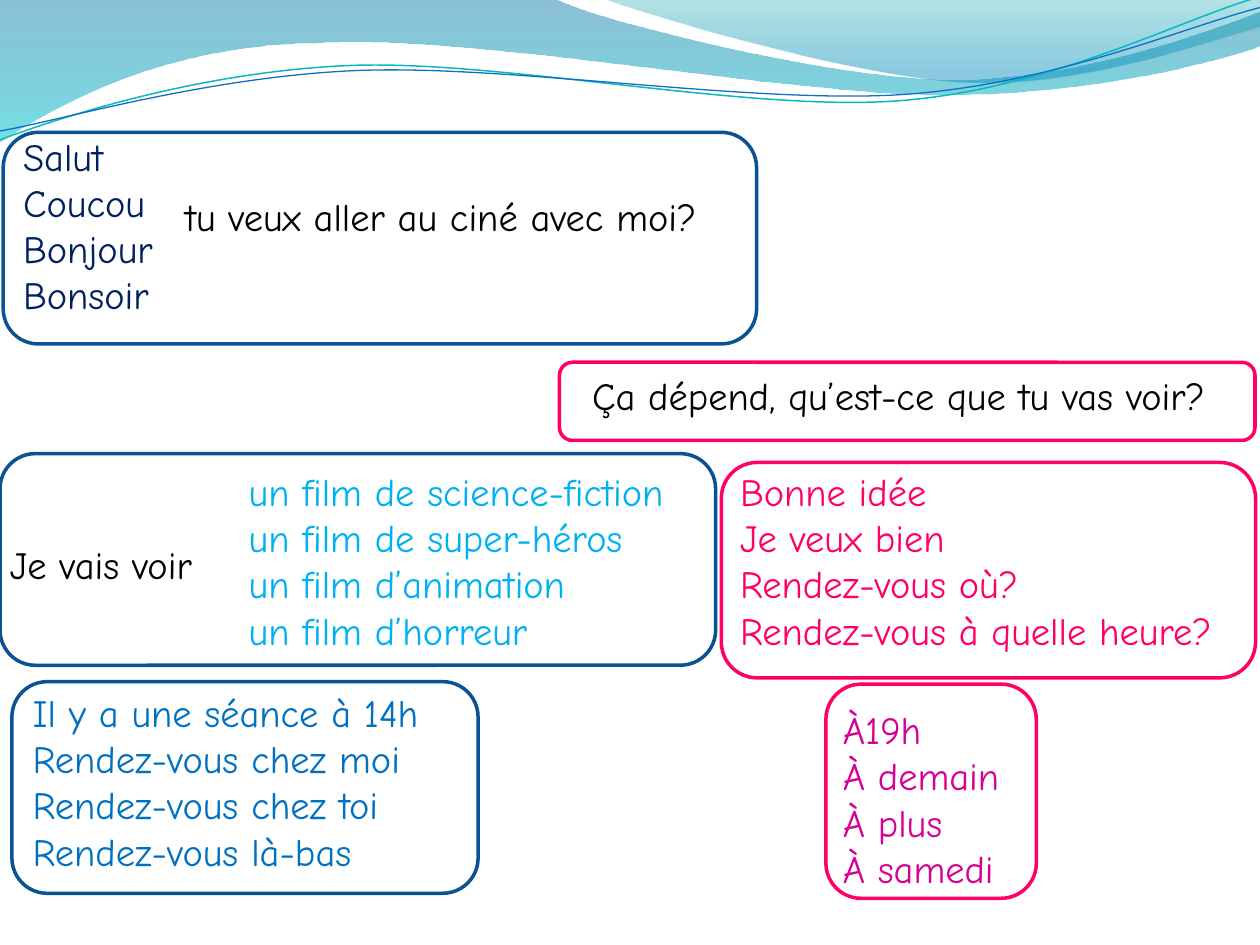
import math

import lxml.etree
import pptx
import pptx.dml.color
import pptx.enum.shapes
import pptx.enum.text
import pptx.oxml
import pptx.oxml.ns
import pptx.util

COLS, ROWS = 100, 75
CELL = pptx.util.Inches(0.1)
TILT = 357.3
NAVY, PINK = "0B5292", "FF0066"
FONT = {"name": "Comic Neue", "size": pptx.util.Pt(22)}
GROW = pptx.enum.text.MSO_AUTO_SIZE.SHAPE_TO_FIT_TEXT

WAVES = [
    ([(0, -0.1), (44, -0.1), (47.6, 1.7, 66.4, 6.3, 75.8, 6.3),
      (85.3, 6.3, 95.8, 2.6, 100, 0.9), (100.1, 3.6),
      (98.3, 4.4, 87, 7.6, 74.6, 7.5), (62.2, 7.5, 38.2, 2.8, 25.7, 3.4),
      (12.9, 3.5, 4.6, 8.3, -0.1, 11.3), (0, -0.1)],
     [(0, "0074A1", 45), (100, "00C6CF", 55)]),
    ([(47.9, -0.1), (50.9, 1.1, 68.2, 6.2, 76.9, 6.5),
      (85.6, 6.9, 96.1, 3.2, 100, 2.1), (100, 0), (47.9, -0.1)],
     [(0, "00A1A9", 30), (80, "008BBF", 45)]),
]
CURVES = [
    ([(0, 11.1), (4.8, 9.3, 15.8, 5.7, 27.7, 5.2), (39.5, 4.7, 59.3, 8.9, 71.3, 8),
      (83.3, 7.1, 93.8, 1.5, 99.8, -0.2)], (49.9, 5.75), "0AB8BF", 0.85),
    ([(0, 10.4), (4.7, 9.6, 16.4, 6.1, 28.3, 5.6), (40.3, 5.1, 59.7, 8.3, 71.7, 7.5),
      (83.6, 6.7, 94.1, 2.1, 100, 0.6)], (49.95, 5.9), "0F6FC6", 0.75),
]
TEXTS = [
    ((13.7, 14.8, 59.8, 4.7), "000000", True, ["tu veux aller au ciné avec moi?"]),
    ((46, 29, 59.8, 4.7), "000000", True, ["Ça dépend, qu’est-ce que tu vas voir?"]),
    ((0.85, 10.05, 17.3, 15.8), "002060", True, ["Salut", "Coucou", "Bonjour", "Bonsoir"]),
    ((-0.2, 42.45, 21, 4.7), "000000", True, ["Je vais voir"]),
    ((18.75, 36.65, 59.8, 19.5), "00B0F0", True,
     ["un film de science-fiction", "un film de super-héros",
      "un film d’animation", "un film d’horreur"]),
    ((57.75, 36.65, 42.5, 19.5), PINK, False,
     ["Bonne idée", "Je veux bien", "Rendez-vous où?", "Rendez-vous à quelle heure?"]),
    ((1.6, 54.2, 34.5, 15.8), "0070C0", False,
     ["Il y a une séance à 14h", "Rendez-vous chez moi",
      "Rendez-vous chez toi", "Rendez-vous là-bas"]),
    ((65.9, 55.55, 15.1, 15.8), "D60093", False, ["À19h", "À demain", "À plus", "À samedi"]),
]
BOXES = [
    ((0.25, 10.5, 59.8, 16.8), NAVY),
    ((44.4, 28.75, 55.2, 6.2), PINK),
    ((0, 36, 56.8, 16.8), NAVY),
    ((57.25, 36.7, 42.4, 17.1), PINK),
    ((65.55, 54.3, 16.7, 17), PINK),
    ((0.95, 54.1, 37, 16.8), NAVY),
]


def tint(code):
    return pptx.dml.color.RGBColor.from_string(code)


def tag(name):
    return pptx.oxml.ns.qn(name)


def grid(vals):
    return [round(val * CELL) for val in vals]


def style(item, vals):
    for key, val in vals.items():
        setattr(item, key, val)


def stroke(shape, code, width):
    shape.shadow.inherit = False
    shape.fill.background()
    shape.line.color.rgb = tint(code)
    shape.line.width = pptx.util.Pt(width)


def pairs(leg):
    return list(zip(leg[::2], leg[1::2]))


def level(leg, hub):
    turn = math.radians(360 - TILT)
    cos, sin = math.cos(turn), math.sin(turn)
    flat = []
    for x, y in pairs(leg):
        x, y = x - hub[0], y - hub[1]
        flat += [hub[0] + x * cos - y * sin, hub[1] + x * sin + y * cos]
    return flat


def trace(shapes, route, close):
    dots = [grid(dot) for leg in route for dot in pairs(leg)]
    pen = shapes.build_freeform(*dots[0])
    pen.add_line_segments(dots[1:], close=close)
    shape = pen.convert_to_shape()
    lines = iter(list(shape.element.spPr.iter(tag("a:lnTo"))))
    for leg in route[1:]:
        first = next(lines)
        if len(leg) == 6:
            curve = lxml.etree.Element(tag("a:cubicBezTo"))
            first.addprevious(curve)
            for line in (first, next(lines), next(lines)):
                curve.append(line[0])
                line.getparent().remove(line)
    return shape


def add_wave(shapes, route, stops):
    wave = trace(shapes, route, True)
    wave.shadow.inherit = False
    wave.line.fill.background()
    wave.fill.gradient()
    wave.fill.gradient_angle = 270
    marks = wave.element.spPr.iter(tag("a:gs"))
    for stop, mark, (place, code, alpha) in zip(wave.fill.gradient_stops, marks, stops):
        stop.color.rgb = tint(code)
        mark.set("pos", str(place * 1000))
        clear = lxml.etree.SubElement(mark[0], tag("a:alpha"))
        clear.set("val", str(alpha * 1000))


def add_curve(shapes, route, hub, code, width):
    curve = trace(shapes, [level(leg, hub) for leg in route], False)
    curve.rotation = TILT
    stroke(curve, code, width)


def add_text(shapes, area, code, wrap, lines):
    frame = shapes.add_textbox(*grid(area)).text_frame
    style(frame, {"word_wrap": wrap, "auto_size": GROW})
    frame.text = "\n".join(lines)
    for para in frame.paragraphs:
        for run in para.runs:
            style(run.font, FONT)
            run.font.color.rgb = tint(code)


def add_box(shapes, area, code):
    kind = pptx.enum.shapes.MSO_SHAPE.ROUNDED_RECTANGLE
    stroke(shapes.add_shape(kind, *grid(area)), code, 2)


def main():
    deck = pptx.Presentation()
    style(deck, {"slide_width": COLS * CELL, "slide_height": ROWS * CELL})
    shapes = deck.slides.add_slide(deck.slide_layouts[6]).shapes
    for wave in WAVES:
        add_wave(shapes, *wave)
    group = shapes.add_group_shape().shapes
    for curve in CURVES:
        add_curve(group, *curve)
    for text in TEXTS:
        add_text(shapes, *text)
    for box in BOXES:
        add_box(shapes, *box)
    deck.save("out.pptx")


if __name__ == "__main__":
    main()
